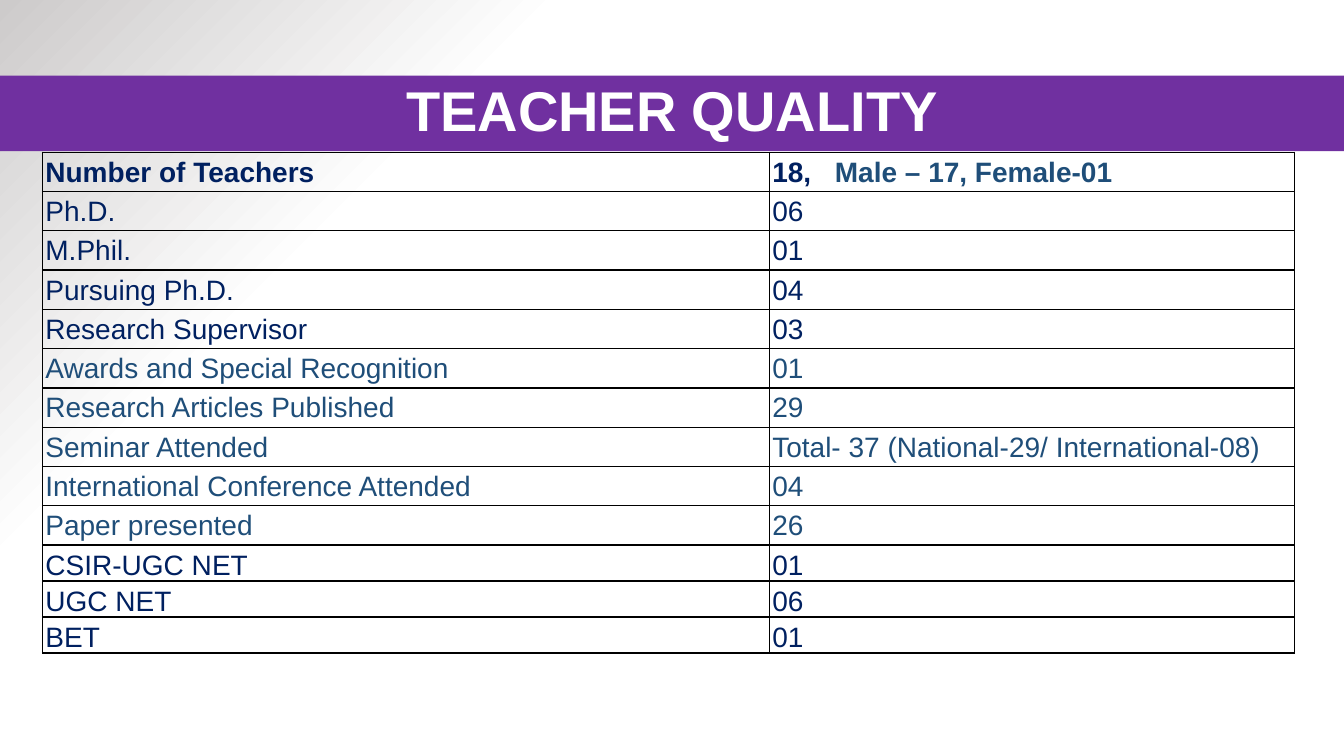
from dataclasses import dataclass

from lxml import etree
from pptx import Presentation
from pptx.dml.color import RGBColor as Rgb
from pptx.enum.shapes import MSO_SHAPE as Shape
from pptx.enum.text import MSO_ANCHOR as Anchor, PP_ALIGN as Align
from pptx.oxml import parse_xml
from pptx.oxml.ns import nsdecls, qn
from pptx.slide import Slide
from pptx.table import _Cell as Cell
from pptx.text.text import _Paragraph as Para
from pptx.util import Inches, Pt

NAVY = "002060"
STEEL = "1F4E79"
WHITE = "FFFFFF"
PURPLE = "7030A0"


@dataclass
class Run:
    text: str
    color: str
    bold: bool = False
    size: int = 20


@dataclass
class Row:
    label: str
    value: str
    color: str
    height: float = 0.39


ROWS = [
    Row("Ph.D.", "06", NAVY),
    Row("M.Phil.", "01", NAVY),
    Row("Pursuing Ph.D.", "04", NAVY),
    Row("Research Supervisor", "03", NAVY),
    Row("Awards and Special Recognition", "01", STEEL),
    Row("Research Articles Published", "29", STEEL),
    Row("Seminar Attended", "Total- 37 (National-29/ International-08)", STEEL),
    Row("International Conference Attended", "04", STEEL),
    Row("Paper presented", "26", STEEL),
    Row("CSIR-UGC NET", "01", NAVY, 0.18),
    Row("UGC NET", "06", NAVY, 0.18),
    Row("BET", "01", NAVY, 0.2),
]


def rgb(code: str) -> Rgb:
    return Rgb.from_string(code)


def write(para: Para, runs: list[Run]) -> None:
    for item in runs:
        run = para.add_run()
        run.text = item.text
        run.font.name = "Arial"
        run.font.size = Pt(item.size)
        run.font.bold = item.bold
        run.font.color.rgb = rgb(item.color)


def shade(slide: Slide) -> None:
    slide.background.fill.solid()
    props = slide.background._cSld.find(f"{qn('p:bg')}/{qn('p:bgPr')}")
    props.replace(props[0], parse_xml(
        f'<a:gradFill {nsdecls("a")} rotWithShape="1"><a:gsLst>'
        '<a:gs pos="73000"><a:srgbClr val="FFFFFF"/></a:gs>'
        '<a:gs pos="100000"><a:srgbClr val="CDCBCB"/></a:gs></a:gsLst>'
        '<a:path path="circle"><a:fillToRect l="100000" t="100000"/></a:path>'
        '</a:gradFill>'))


def banner(slide: Slide) -> None:
    bar = slide.shapes.add_shape(
        Shape.RECTANGLE, 0, Inches(0.75), Inches(13.33), Inches(0.75))
    bar.shadow.inherit = False
    bar.fill.solid()
    bar.fill.fore_color.rgb = rgb(PURPLE)
    bar.line.fill.background()
    bar.text_frame.word_wrap = True
    bar.text_frame.vertical_anchor = Anchor.MIDDLE
    para = bar.text_frame.paragraphs[0]
    para.alignment = Align.CENTER
    para.line_spacing = 0.9
    write(para, [Run("TEACHER QUALITY", WHITE, True, 40)])


def border(cell: Cell) -> None:
    props = cell._tc.get_or_add_tcPr()
    for spot, side in enumerate("LRTB"):
        props.insert(spot, parse_xml(
            f'<a:ln{side} {nsdecls("a")} w="12700"><a:solidFill>'
            f'<a:srgbClr val="000000"/></a:solidFill></a:ln{side}>'))


def fill_cell(cell: Cell, runs: list[Run]) -> None:
    cell.fill.background()
    border(cell)
    cell.margin_left = cell.margin_right = Inches(0.03)
    cell.margin_top = cell.margin_bottom = 0
    para = cell.text_frame.paragraphs[0]
    para.line_spacing = 1.15
    para.space_after = Pt(10)
    write(para, runs)


def add_tab(para: Para, place: float) -> None:
    tabs = etree.SubElement(para._p.get_or_add_pPr(), qn("a:tabLst"))
    etree.SubElement(tabs, qn("a:tab"), pos=str(Inches(place)), algn="l")


def staff(slide: Slide) -> None:
    table = slide.shapes.add_table(
        len(ROWS) + 1, 2, Inches(0.42), Inches(1.51),
        Inches(12.42), Inches(5.01)).table
    table.first_row = table.horz_banding = False
    for col, width in zip(table.columns, (7.21, 5.21)):
        col.width = Inches(width)
    table.rows[0].height = Inches(0.39)
    fill_cell(table.cell(0, 0), [Run("Number of Teachers", NAVY, True)])
    total = table.cell(0, 1)
    fill_cell(total, [Run("18,\t", NAVY, True),
                      Run("Male – 17, Female-01", STEEL, True)])
    add_tab(total.text_frame.paragraphs[0], 0.62)
    for spot, row in enumerate(ROWS, 1):
        table.rows[spot].height = Inches(row.height)
        for col, text in enumerate((row.label, row.value)):
            fill_cell(table.cell(spot, col), [Run(text, row.color)])


def main() -> None:
    deck = Presentation()
    deck.slide_width = Inches(13.33)
    deck.slide_height = Inches(7.5)
    slide = deck.slides.add_slide(deck.slide_layouts[6])
    shade(slide)
    banner(slide)
    staff(slide)
    deck.save("out.pptx")


if __name__ == "__main__":
    main()
